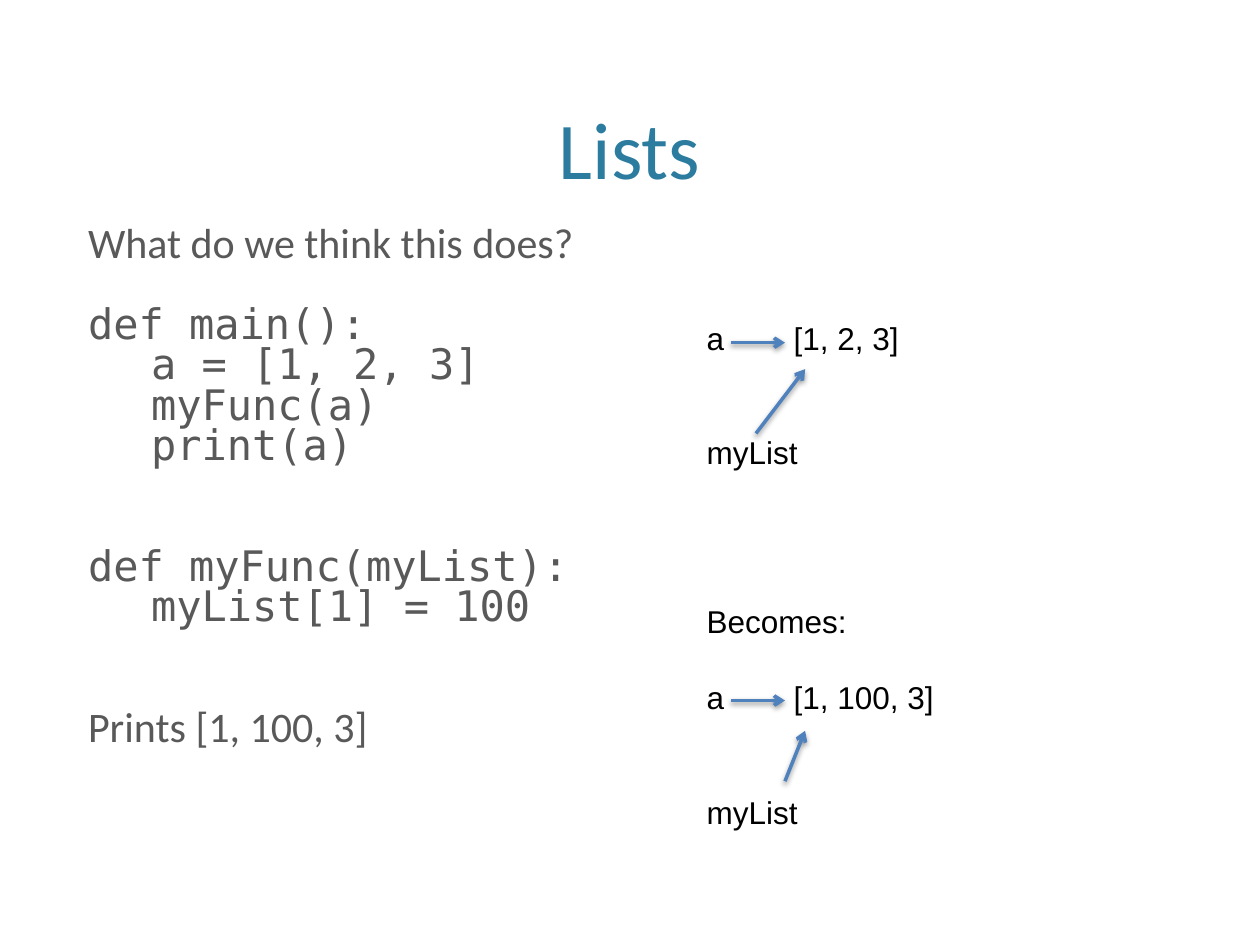
from dataclasses import dataclass

from lxml import etree
from pptx import Presentation
from pptx import util as u
from pptx.dml.color import RGBColor
from pptx.enum import shapes, text
from pptx.oxml import ns


@dataclass(frozen=True)
class Theme:
    title: str = "2C7C9F"
    body: str = "595959"
    label: str = "000000"
    arrow: str = "4F81BD"
    heading_font: str = "Calibri"
    code_font: str = "DejaVu Sans Mono"
    label_font: str = "Arial"
    title_size: int = 46
    body_size: int = 24
    label_size: int = 18
    body_blank: int = 23
    label_blank: int = 22


THEME = Theme()


def add_box(slide, box, anchor=text.MSO_ANCHOR.TOP, grow=False):
    shape = slide.shapes.add_textbox(*(u.Inches(value) for value in box))
    frame = shape.text_frame
    frame.word_wrap = True
    frame.vertical_anchor = anchor
    if grow:
        frame.auto_size = text.MSO_AUTO_SIZE.SHAPE_TO_FIT_TEXT
    return frame


def write(frame, words, font, size, color, align=None, before=0, spacing=None, indent=0, tab=0):
    first = frame.paragraphs[0]
    paragraph = first if not first.runs else frame.add_paragraph()
    properties = paragraph._p.get_or_add_pPr()
    if indent:
        properties.set("marL", str(u.Inches(indent)))
        properties.set("indent", "0")
    if tab:
        tabs = etree.SubElement(properties, ns.qn("a:tabLst"))
        etree.SubElement(tabs, ns.qn("a:tab"), pos=str(u.Inches(tab)), algn="l")
    if align is not None:
        paragraph.alignment = align
    if spacing:
        paragraph.line_spacing = spacing
    if before:
        paragraph.space_before = u.Pt(before)
    run = paragraph.add_run()
    run.text = words
    run.font.name = font
    run.font.size = u.Pt(size)
    run.font.color.rgb = RGBColor.from_string(color)


def add_arrow(slide, start, end):
    points = (u.Inches(value) for value in (*start, *end))
    arrow = slide.shapes.add_connector(shapes.MSO_CONNECTOR.STRAIGHT, *points)
    arrow.line.color.rgb = RGBColor.from_string(THEME.arrow)
    arrow.line.width = u.Pt(2)
    etree.SubElement(arrow.line._get_or_add_ln(), ns.qn("a:tailEnd"), type="arrow")
    effects = etree.SubElement(arrow._element.spPr, ns.qn("a:effectLst"))
    shadow = etree.SubElement(
        effects, ns.qn("a:outerShdw"), blurRad=str(u.Pt(3.1)), dist=str(u.Pt(1.6)),
        dir="5400000", rotWithShape="0",
    )
    color = etree.SubElement(shadow, ns.qn("a:srgbClr"), val="000000")
    etree.SubElement(color, ns.qn("a:alpha"), val="38000")


def add_title(slide, box, words):
    frame = add_box(slide, box, anchor=text.MSO_ANCHOR.BOTTOM)
    write(frame, words, THEME.heading_font, THEME.title_size, THEME.title,
          align=text.PP_ALIGN.CENTER)


def add_code(slide, box, lines):
    frame = add_box(slide, box)
    for words, font, blanks, indent in lines:
        write(frame, words, font, THEME.body_size, THEME.body, spacing=0.8,
              before=blanks * THEME.body_blank, indent=indent)


def add_references(slide, box, lines, arrows):
    frame = add_box(slide, box, grow=True)
    for words, blanks in lines:
        write(frame, words, THEME.label_font, THEME.label_size, THEME.label,
              before=blanks * THEME.label_blank, tab=0.69)
    left, top = box[:2]
    for x1, y1, x2, y2 in arrows:
        add_arrow(slide, (left + x1, top + y1), (left + x2, top + y2))


def main():
    presentation = Presentation()
    presentation.slide_width = u.Inches(10)
    presentation.slide_height = u.Inches(7.5)
    slide = presentation.slides.add_slide(presentation.slide_layouts[6])

    add_title(slide, (0.6, 0.56, 8.79, 1.04), "Lists")
    prose, code = THEME.heading_font, THEME.code_font
    add_code(slide, (0.6, 1.75, 8.79, 4.75), [
        ("What do we think this does?", prose, 0, 0),
        ("def main():", code, 1, 0),
        ("a = [1, 2, 3]", code, 0, 0.5),
        ("myFunc(a)", code, 0, 0.5),
        ("print(a)", code, 0, 0.5),
        ("def myFunc(myList):", code, 2, 0),
        ("myList[1] = 100", code, 0, 0.5),
        ("Prints [1, 100, 3]", prose, 2, 0),
    ])
    add_references(
        slide, (5.51, 2.48, 3.07, 1.31),
        [("a\t[1, 2, 3]", 0), ("myList", 2)],
        [(0.29, 0.24, 0.72, 0.24), (0.49, 0.96, 0.88, 0.45)],
    )
    add_references(
        slide, (5.51, 4.73, 3.07, 1.92),
        [("Becomes:", 0), ("a\t[1, 100, 3]", 1), ("myList", 2)],
        [(0.29, 0.83, 0.72, 0.83), (0.72, 1.47, 0.88, 1.07)],
    )
    presentation.save("out.pptx")


if __name__ == "__main__":
    main()
